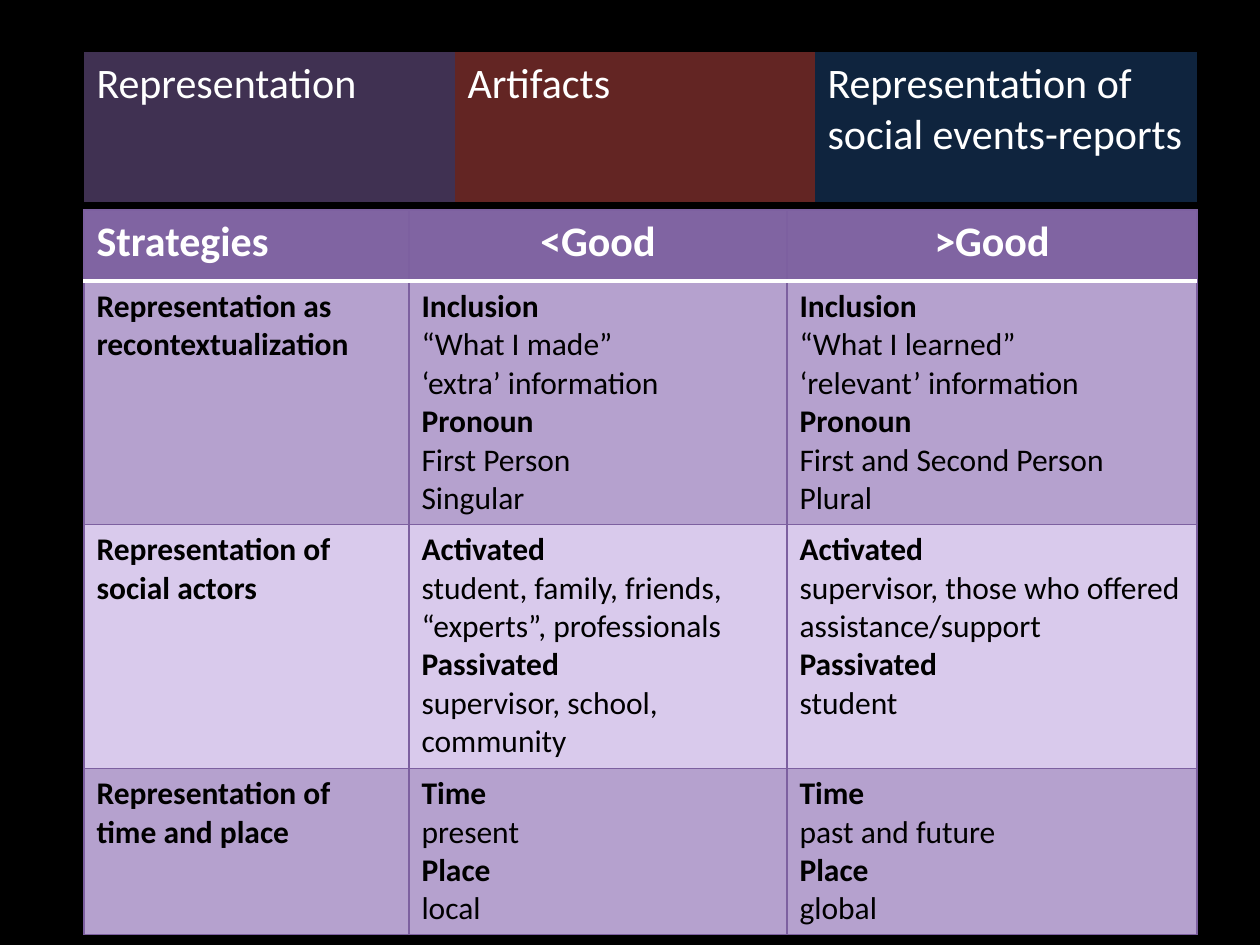
from lxml.etree import SubElement
from pptx import Presentation
from pptx.dml.color import RGBColor
from pptx.enum.text import PP_ALIGN as Align
from pptx.oxml.ns import qn
from pptx.util import Pt

PX = 914400 / 126
FONT = "Calibri"
NO_STYLE = "{2D5ABB26-0587-4C30-8999-92F81FD0307C}"
C = {
    "black": "000000", "white": "FFFFFF",
    "plum": "403152", "maroon": "632523", "navy": "0F243E",
    "header": "8064A2", "border": "7D60A0",
    "band": "B5A1CE", "light": "D9CAEC",
}

TOPICS = [
    ("Representation", "plum"),
    ("Artifacts", "maroon"),
    ("Representation of social events-reports", "navy"),
]
HEADINGS = ["Strategies", "<Good", ">Good"]
# Each strategy has two cells; a cell maps a bold heading to its plain lines.
STRATEGIES = [
    ("Representation as recontextualization",
     {"Inclusion": ["“What I made”", "‘extra’ information"],
      "Pronoun": ["First Person", "Singular"]},
     {"Inclusion": ["“What I learned”", "‘relevant’ information"],
      "Pronoun": ["First and Second Person", "Plural"]}),
    ("Representation of social actors",
     {"Activated": ["student, family, friends, “experts”, professionals"],
      "Passivated": ["supervisor, school, community"]},
     {"Activated": ["supervisor, those who offered assistance/support"],
      "Passivated": ["student"]}),
    ("Representation of time and place",
     {"Time": ["present"], "Place": ["local"]},
     {"Time": ["past and future"], "Place": ["global"]}),
]


def px(n):
    return round(n * PX)


def rgb(name):
    return RGBColor.from_string(C[name])


def add_plain_table(slide, x, y, cols, rows):
    """Add a table without a built-in style, sized by its columns and rows."""
    frame = slide.shapes.add_table(len(rows), len(cols), px(x), px(y),
                                   px(sum(cols)), px(sum(rows)))
    table = frame.table
    table.horz_banding = False
    frame._element.find(".//" + qn("a:tableStyleId")).text = NO_STYLE
    for col, width in zip(table.columns, cols):
        col.width = px(width)
    for row, height in zip(table.rows, rows):
        row.height = px(height)
    return table


def set_borders(cell, **edges):
    """Draw the edges L, R, T, B, each given as (colour, points)."""
    tc_pr = cell._tc.get_or_add_tcPr()
    for side in "LRTB":
        color, width = edges.get(side, ("border", 0.75))
        ln = SubElement(tc_pr, qn(f"a:ln{side}"), w=str(Pt(width)))
        fill = SubElement(ln, qn("a:solidFill"))
        SubElement(fill, qn("a:srgbClr"), val=C[color])


def fill_cell(cell, lines, fill, size, color, align=Align.LEFT):
    """Fill a cell with one paragraph for each (text, bold) line."""
    cell.fill.solid()
    cell.fill.fore_color.rgb = rgb(fill)
    tf = cell.text_frame
    for i, (text, bold) in enumerate(lines):
        p = tf.add_paragraph() if i else tf.paragraphs[0]
        p.alignment = align
        r = p.add_run()
        r.text = text
        r.font.name, r.font.size, r.font.bold = FONT, Pt(size), bold
        r.font.color.rgb = rgb(color)


def group_lines(groups):
    for heading, details in groups.items():
        yield heading, True
        for detail in details:
            yield detail, False


def add_topic_bar(slide, x, y):
    table = add_plain_table(slide, x, y, [371, 360, 382], [150])
    for cell, (text, fill) in zip(table.iter_cells(), TOPICS):
        fill_cell(cell, [(text, False)], fill, 24, "white")


def add_strategy_table(slide, x, y):
    table = add_plain_table(slide, x, y, [325, 378, 410], [71, 243, 244, 166])
    rule = ("white", 2)
    for i, heading in enumerate(HEADINGS):
        cell = table.cell(0, i)
        set_borders(cell, B=rule)
        fill_cell(cell, [(heading, True)], "header", 24, "white",
                  Align.CENTER if i else Align.LEFT)
    for row, (name, *groups) in enumerate(STRATEGIES, 1):
        contents = [[(name, True)], *map(group_lines, groups)]
        for col, lines in enumerate(contents):
            cell = table.cell(row, col)
            set_borders(cell, **({"T": rule} if row == 1 else {}))
            fill_cell(cell, lines, "band" if row % 2 else "light", 18, "black")


def main():
    prs = Presentation()
    prs.slide_width, prs.slide_height = px(1260), px(945)
    s = prs.slides.add_slide(prs.slide_layouts[6])
    s.background.fill.solid()
    s.background.fill.fore_color.rgb = rgb("black")
    add_topic_bar(s, 84, 52)
    add_strategy_table(s, 84, 210)
    prs.save("out.pptx")


if __name__ == "__main__":
    main()
